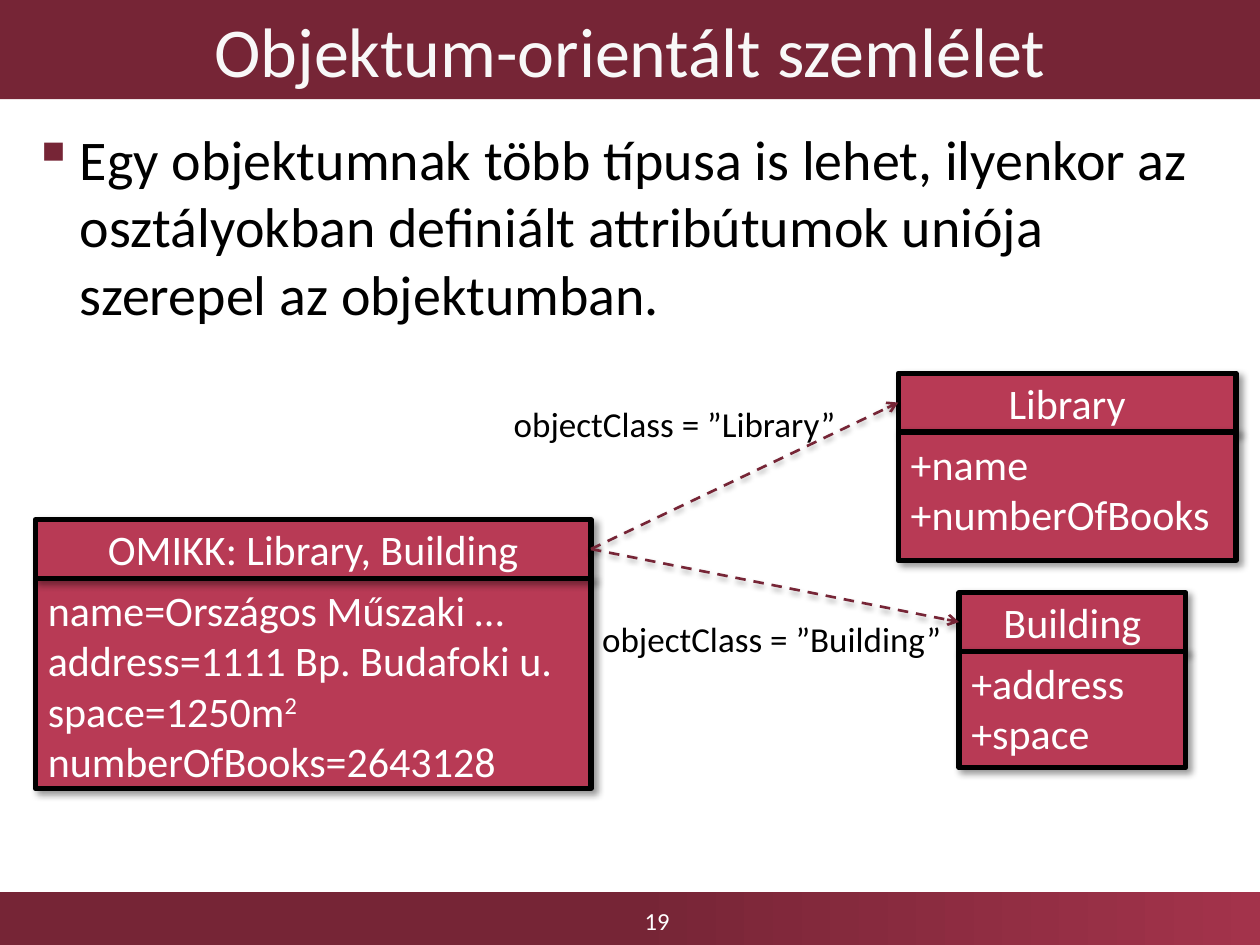
from dataclasses import dataclass

from lxml import etree
from pptx import Presentation
from pptx import util as u
from pptx.dml.color import RGBColor
from pptx.enum import dml, shapes, text
from pptx.oxml import ns

FONT = "Calibri"
HEADER_HEIGHT = 33.5
COLORS = {
    "burgundy": "762536",
    "crimson": "A3334B",
    "rose": "B83A55",
    "title": "F8F8F8",
    "white": "FFFFFF",
    "black": "000000",
}


@dataclass
class Area:
    left: float
    top: float
    width: float
    height: float

    def lengths(self) -> list:
        return [u.Pt(n) for n in (self.left, self.top, self.width, self.height)]


@dataclass
class Style:
    size: float
    color: str
    align: text.PP_ALIGN = text.PP_ALIGN.LEFT
    anchor: text.MSO_ANCHOR = text.MSO_ANCHOR.TOP


@dataclass
class Shadow:
    alpha: int
    blur: float
    distance: float
    angle: int


@dataclass
class ClassBox:
    area: Area
    name: str
    members: list[str]
    header_on_top: bool = False


@dataclass
class Relation:
    target: str
    label: str
    label_area: Area


CENTER, MIDDLE = text.PP_ALIGN.CENTER, text.MSO_ANCHOR.MIDDLE
HEADER = Style(24, "white", CENTER, MIDDLE)
MEMBER = Style(24, "white")
BOX_SHADOW = Shadow(40, 4, 3, 45)
LINE_SHADOW = Shadow(35, 3.1, 1.8, 90)

CLASS_BOXES = [
    ClassBox(Area(20.2, 297, 317.5, 153.7), "OMIKK: Library, Building",
             ["name=Országos Műszaki …", "address=1111 Bp. Budafoki u.",
              "space=1250m^2", "numberOfBooks=2643128"], True),
    ClassBox(Area(513.3, 213.3, 193, 107), "Library", ["+name", "+numberOfBooks"]),
    ClassBox(Area(548, 338.7, 129.6, 100), "Building", ["+address", "+space"]),
]
RELATIONS = [
    Relation("Library", "objectClass = ”Library”", Area(286.5, 226.3, 200, 31.5)),
    Relation("Building", "objectClass = ”Building”", Area(337, 349.5, 210, 31.5)),
]


def rgb(name: str) -> RGBColor:
    return RGBColor.from_string(COLORS[name])


def add_child(parent, tag: str, **attributes):
    return etree.SubElement(parent, ns.qn(tag), attributes)


def add_shadow(properties, shadow: Shadow) -> None:
    effects = add_child(properties, "a:effectLst")
    outer = add_child(effects, "a:outerShdw", blurRad=str(u.Pt(shadow.blur)),
                      dist=str(u.Pt(shadow.distance)), dir=str(shadow.angle * 60000),
                      algn="tl", rotWithShape="0")
    color = add_child(outer, "a:srgbClr", val=COLORS["black"])
    add_child(color, "a:alpha", val=str(shadow.alpha * 1000))


def add_bullet(para) -> None:
    properties = para._p.get_or_add_pPr()
    properties.set("marL", str(u.Pt(27)))
    properties.set("indent", str(u.Pt(-27)))
    add_child(add_child(properties, "a:buClr"), "a:srgbClr", val=COLORS["burgundy"])
    add_child(properties, "a:buChar", char="▪")


def write(box, lines: list[str], style: Style, bullet: bool = False) -> None:
    """Write one paragraph per line; a caret starts a superscript."""
    frame = box.text_frame
    frame.word_wrap = True
    frame.vertical_anchor = style.anchor
    for index, line in enumerate(lines):
        para = frame.add_paragraph() if index else frame.paragraphs[0]
        para.alignment = style.align
        if bullet:
            add_bullet(para)
        para.font.name = FONT
        para.font.size = u.Pt(style.size)
        para.font.color.rgb = rgb(style.color)
        base, _, raised = line.partition("^")
        para.add_run().text = base
        if raised:
            span = para.add_run()
            span.text = raised
            span.font._element.set("baseline", "30000")


def add_rectangle(page, area: Area, fill: str):
    box = page.shapes.add_shape(shapes.MSO_SHAPE.RECTANGLE, *area.lengths())
    box.shadow.inherit = False
    box.fill.solid()
    box.fill.fore_color.rgb = rgb(fill)
    box.line.fill.background()
    return box


def add_text(page, area: Area, line: str, style: Style, bullet: bool = False):
    box = page.shapes.add_textbox(*area.lengths())
    write(box, [line], style, bullet)
    return box


def add_compartment(page, area: Area, lines: list[str], style: Style):
    box = add_rectangle(page, area, "rose")
    box.line.color.rgb = rgb("black")
    box.line.width = u.Pt(3)
    box._element.spPr.remove(box._element.spPr.find(ns.qn("a:effectLst")))
    add_shadow(box._element.spPr, BOX_SHADOW)
    write(box, lines, style)
    return box


def add_class_box(page, item: ClassBox):
    """Draw both compartments and return the header."""
    area = item.area
    header = (Area(area.left, area.top, area.width, HEADER_HEIGHT), [item.name], HEADER)
    body = (Area(area.left, area.top + HEADER_HEIGHT, area.width,
                 area.height - HEADER_HEIGHT), item.members, MEMBER)
    if item.header_on_top:
        add_compartment(page, *body)
        return add_compartment(page, *header)
    header_box = add_compartment(page, *header)
    add_compartment(page, *body)
    return header_box


def add_relation(page, source, target, relation: Relation) -> None:
    arrow = page.shapes.add_connector(shapes.MSO_CONNECTOR.STRAIGHT, 0, 0, 0, 0)
    arrow.begin_connect(source, 3)
    arrow.end_connect(target, 1)
    arrow.line.color.rgb = rgb("burgundy")
    arrow.line.width = u.Pt(1.5)
    arrow.line.dash_style = dml.MSO_LINE.DASH
    add_child(arrow.line._get_or_add_ln(), "a:tailEnd", type="arrow")
    add_shadow(arrow._element.spPr, LINE_SHADOW)
    label = add_text(page, relation.label_area, relation.label, Style(20, "black"))
    label.text_frame.word_wrap = False
    label.text_frame.auto_size = text.MSO_AUTO_SIZE.SHAPE_TO_FIT_TEXT


def main() -> None:
    deck = Presentation()
    deck.slide_width, deck.slide_height = u.Pt(720), u.Pt(540)
    page = deck.slides.add_slide(deck.slide_layouts[6])

    # Footer band with the page number
    footer = add_rectangle(page, Area(0, 509.8, 720, 30.2), "burgundy")
    footer.fill.gradient()
    footer.fill.gradient_angle = 0
    stops = zip(footer.fill.gradient_stops, (0.5, 1), ("burgundy", "crimson"))
    for stop, position, color in stops:
        stop.position = position
        stop.color.rgb = rgb(color)
    add_text(page, Area(258.5, 512, 234, 28), "19", Style(14, "white", CENTER, MIDDLE))

    # Title band and statement
    title = add_rectangle(page, Area(0, 0, 720, 56.7), "burgundy")
    write(title, ["Objektum-orientált szemlélet"], Style(40, "title", CENTER, MIDDLE))
    add_text(page, Area(11.5, 67.7, 697.7, 435.6),
             "Egy objektumnak több típusa is lehet, ilyenkor az osztályokban "
             "definiált attribútumok uniója szerepel az objektumban.",
             Style(32, "black"), bullet=True)

    # Object, its classes and the relations between them
    headers = {item.name: add_class_box(page, item) for item in CLASS_BOXES}
    source = headers[CLASS_BOXES[0].name]
    for relation in RELATIONS:
        add_relation(page, source, headers[relation.target], relation)

    deck.save("out.pptx")


if __name__ == "__main__":
    main()
